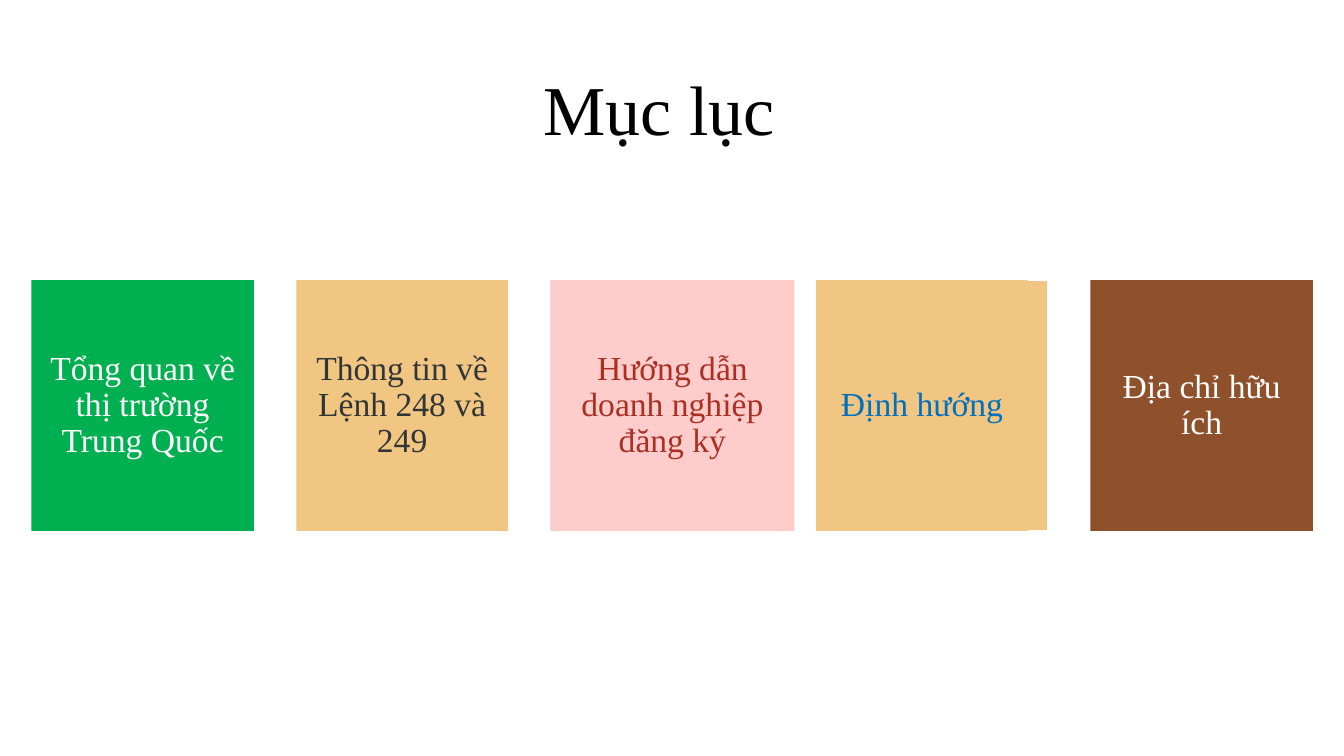
from dataclasses import dataclass

from pptx import Presentation
from pptx.dml.color import RGBColor
from pptx.enum.shapes import MSO_SHAPE
from pptx.enum.text import MSO_ANCHOR, PP_ALIGN
from pptx.shapes.autoshape import Shape
from pptx.slide import Slide
from pptx.util import Cm, Pt

FONT = "Times New Roman"
CARD_TOP = 7.06
CARD_HEIGHT = 6.32


@dataclass
class Card:
    text: str
    left: float
    width: float
    fill: str
    color: str
    back_fill: str
    back_shift: float = 0


CARDS = [
    Card("Hướng dẫn doanh nghiệp đăng ký", 13.87, 6.15, "FFCCCC", "A93023", "BAAE97"),
    Card("Tổng quan về thị trường Trung Quốc", 0.79, 5.61, "00B050", "FFFFFF", "FFFF00"),
    Card("Thông tin về Lệnh 248 và 249", 7.47, 5.33, "F0C682", "323536", "F0C682"),
    Card("Địa chỉ hữu ích", 27.48, 5.61, "8F502C", "FFFFFF", "8F502C"),
    Card("Định hướng", 20.57, 5.33, "F0C682", "0070C0", "F0C682", 0.51),
]


def rgb(value: str) -> RGBColor:
    return RGBColor.from_string(value)


def set_text(sp: Shape, text: str, size: float, color: str, inset: float, spacing: float) -> None:
    tf = sp.text_frame
    tf.word_wrap = True
    tf.vertical_anchor = MSO_ANCHOR.MIDDLE
    tf.margin_left = tf.margin_right = tf.margin_top = tf.margin_bottom = Cm(inset)
    tf.text = text
    p = tf.paragraphs[0]
    p.alignment = PP_ALIGN.CENTER
    p.line_spacing = spacing
    r = p.runs[0]
    r.font.name = FONT
    r.font.size = Pt(size)
    r.font.color.rgb = rgb(color)


def add_panel(s: Slide, left: float, width: float, fill: str) -> Shape:
    sp = s.shapes.add_shape(
        MSO_SHAPE.RECTANGLE, Cm(left), Cm(CARD_TOP), Cm(width), Cm(CARD_HEIGHT)
    )
    sp.shadow.inherit = False
    sp.fill.solid()
    sp.fill.fore_color.rgb = rgb(fill)
    sp.line.fill.background()
    return sp


def add_card(s: Slide, card: Card) -> None:
    back = add_panel(s, card.left + card.back_shift, card.width, card.back_fill)
    back.line.color.rgb = rgb("FFFFFF")
    back.line.width = Pt(1.25)
    front = add_panel(s, card.left, card.width, card.fill)
    set_text(front, card.text, 24, card.color, 0.25, 0.9)


def main() -> None:
    prs = Presentation()
    prs.slide_width = Cm(33.87)
    prs.slide_height = Cm(19.05)
    s = prs.slides.add_slide(prs.slide_layouts[6])
    title = s.shapes.add_textbox(Cm(1.14), Cm(1.17), Cm(30.94), Cm(3.43))
    set_text(title, "Mục lục", 50, "000000", 0.33, 0.85)
    for card in CARDS:
        add_card(s, card)
    prs.save("out.pptx")


if __name__ == "__main__":
    main()
